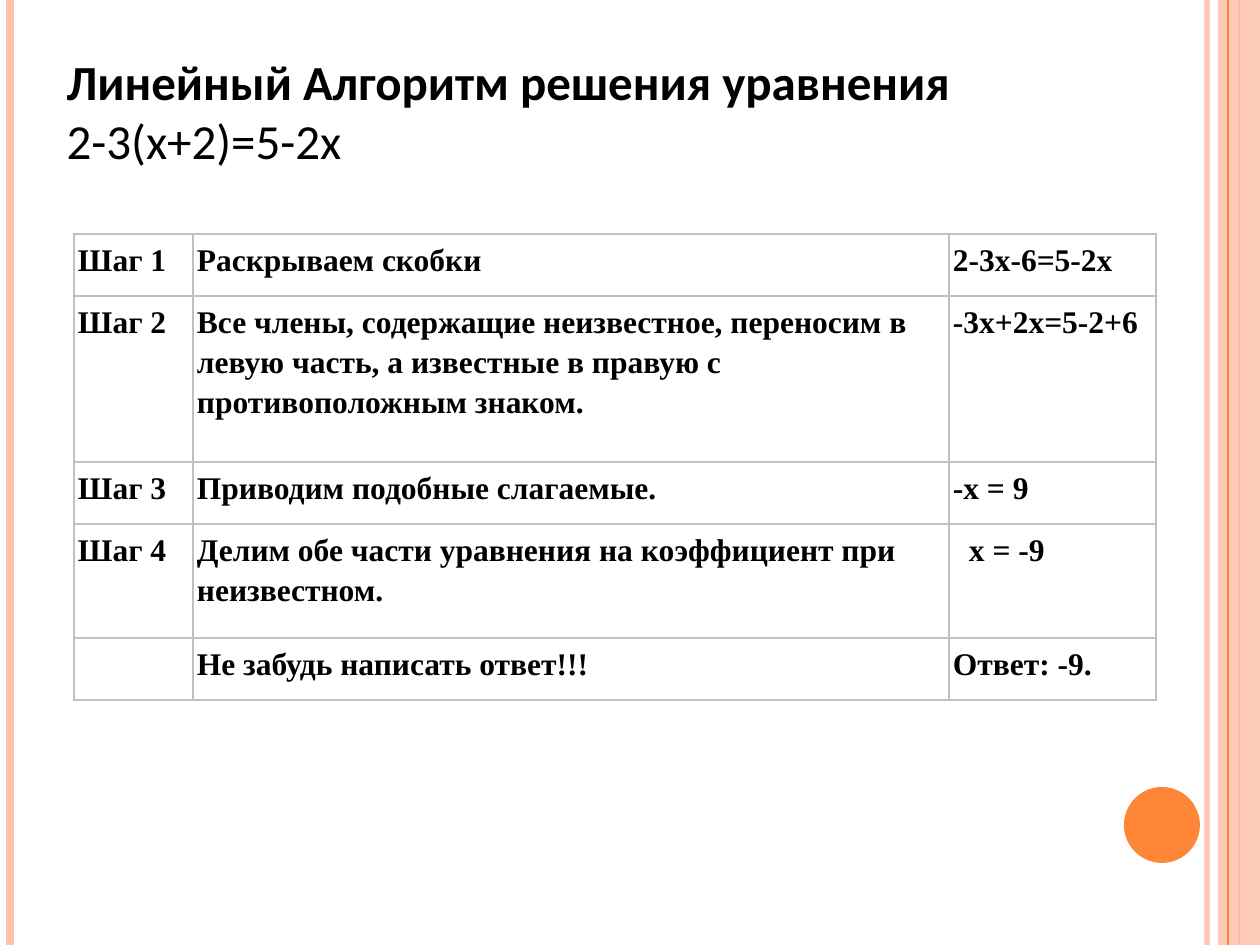
from pptx import Presentation
from pptx.dml.color import RGBColor
from pptx.enum.shapes import MSO_CONNECTOR as Link, MSO_SHAPE as Form
from pptx.enum.text import MSO_ANCHOR as Anchor, MSO_AUTO_SIZE as Fit, PP_ALIGN as Align
from pptx.oxml.ns import qn
from pptx.util import Emu, Pt
from lxml.etree import SubElement as Sub

PEACH, ORANGE, GREY, BLACK = "FEC3AE", "FE8637", "C0C0C0", "000000"
STEPS = [
    ("Шаг 1", "Раскрываем скобки", "2-3x-6=5-2x"),
    ("Шаг 2", "Все члены, содержащие неизвестное, переносим в левую часть, "
     "а известные в правую с противоположным знаком.", "-3x+2x=5-2+6"),
    ("Шаг 3", "Приводим подобные слагаемые.", "-x = 9"),
    ("Шаг 4", "Делим обе части уравнения на коэффициент при неизвестном.", "х = -9"),
    ("", "Не забудь написать ответ!!!", "Ответ: -9."),
]


def px(n):
    return Emu(round(n * 914400 / 126))


def tint(code):
    return RGBColor.from_string(code)


def fade(shape, part):
    for node in shape.element.iter(qn("a:srgbClr")):
        Sub(node, qn("a:alpha"), val=str(part * 1000))


class Page:
    """Hold the fonts and the slide, and draw each kind of element."""

    head, body = "Calibri", "Times New Roman"

    def __init__(self, deck):
        self.slide = deck.slides.add_slide(deck.slide_layouts[5])
        self.shapes = self.slide.shapes

    def style(self, para, face, size, bold):
        for run in para.runs:
            font = run.font
            font.name, font.size, font.bold = face, Pt(size), bold
            font.color.rgb = tint(BLACK)

    def title(self, box, lines):
        name = self.shapes.title
        name.left, name.top, name.width, name.height = map(px, box)
        frame = name.text_frame
        frame.text = "\n".join(lines)
        frame.word_wrap, frame.auto_size = True, Fit.NONE
        frame.vertical_anchor = Anchor.TOP
        for i, para in enumerate(frame.paragraphs):
            para.alignment = Align.LEFT
            self.style(para, self.head, 28, i == 0)

    def rule(self, x, color, width, part=100):
        line = self.shapes.add_connector(Link.STRAIGHT, px(x), 0, px(x), px(945))
        line.line.color.rgb = tint(color)
        line.line.width = Pt(width)
        Sub(line.element.spPr, qn("a:effectLst"))
        if part < 100:
            fade(line, part)

    def shape(self, form, box, color, part=100):
        item = self.shapes.add_shape(form, *map(px, box))
        item.shadow.inherit = False
        item.fill.solid()
        item.fill.fore_color.rgb = tint(color)
        item.line.fill.background()
        if part < 100:
            fade(item, part)

    def edge(self, cell):
        props = cell._tc.get_or_add_tcPr()
        for i, side in enumerate(("lnL", "lnR", "lnT", "lnB")):
            line = props.makeelement(qn("a:" + side), {"w": str(Pt(1))})
            Sub(Sub(line, qn("a:solidFill")), qn("a:srgbClr"), val=GREY)
            props.insert(i, line)

    def table(self, left, top, cols, rows, data):
        grid = self.shapes.add_table(
            len(rows), len(cols), px(left), px(top), px(sum(cols)), px(sum(rows))).table
        grid.first_row = grid.horz_banding = False
        for col, wide in zip(grid.columns, cols):
            col.width = px(wide)
        for row, high, words in zip(grid.rows, rows, data):
            row.height = px(high)
            for cell, text in zip(row.cells, words):
                self.cell(cell, text)
        return grid

    def cell(self, cell, text):
        cell.margin_left = cell.margin_right = px(4)
        cell.margin_top = cell.margin_bottom = px(4)
        cell.fill.background()
        self.edge(cell)
        cell.text_frame.text = text
        para = cell.text_frame.paragraphs[0]
        para.line_spacing = 1.15
        self.style(para, self.body, 18, True)


def main():
    deck = Presentation()
    deck.slide_width, deck.slide_height = px(1260), px(945)
    page = Page(deck)
    page.rule(1207, PEACH, 3, 93)
    page.rule(10, PEACH, 4.5)
    page.rule(1239, ORANGE, 1.5)
    page.shape(Form.RECTANGLE, (1218, 0, 42, 945), PEACH, 87)
    page.rule(1228, ORANGE, 0.75)
    page.shape(Form.OVAL, (1124, 787, 76, 76), ORANGE)
    page.title((54, 45, 1012, 183),
               ("Линейный Алгоритм решения уравнения", "2-3(x+2)=5-2x"))
    grid = page.table(74, 234, (119, 756, 207), (62, 166, 62, 114, 62), STEPS)
    grid.cell(3, 2).margin_left = px(20)
    deck.save("out.pptx")


if __name__ == "__main__":
    main()
